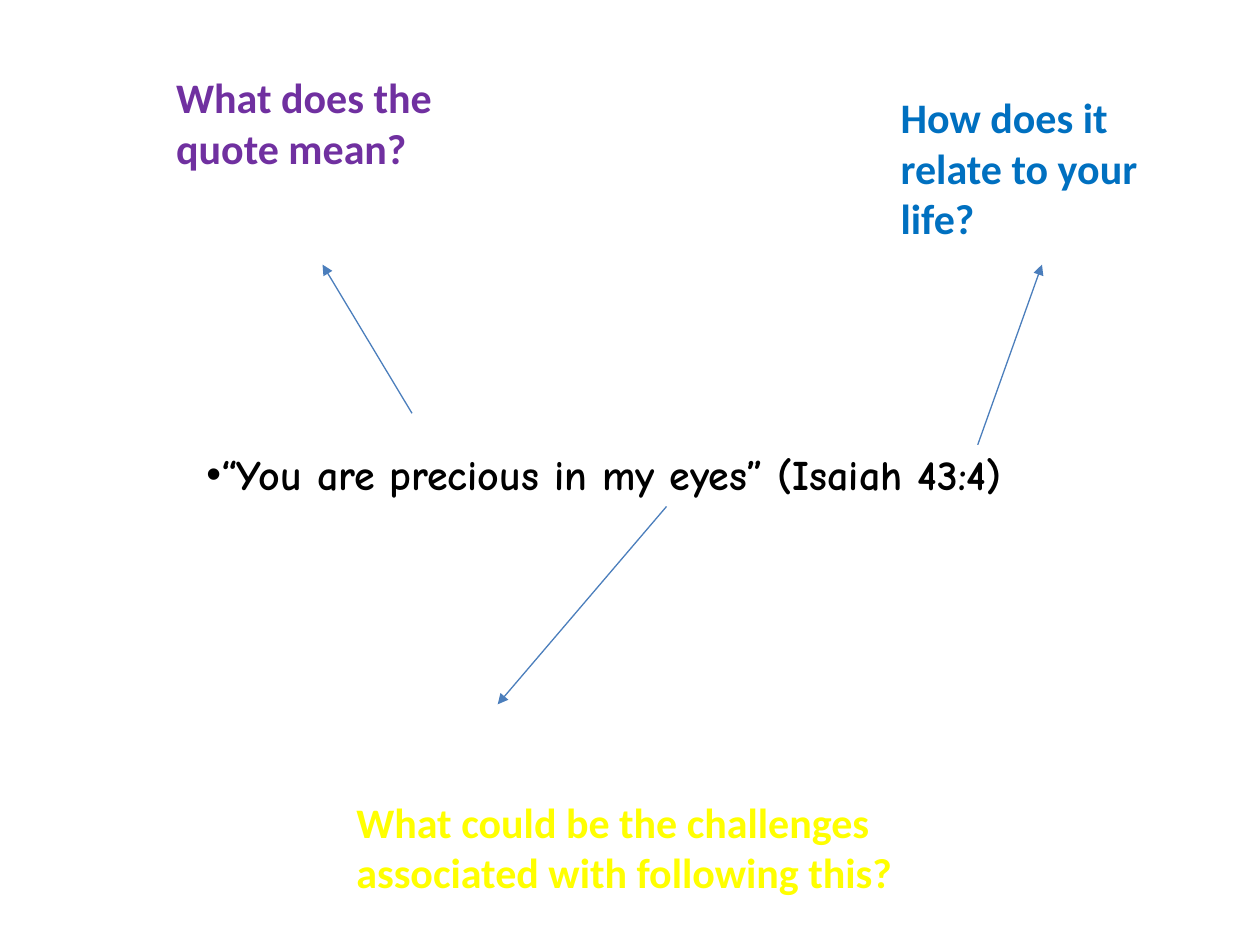
from lxml import etree
from pptx import Presentation
from pptx.dml.color import RGBColor
from pptx.enum.shapes import MSO_CONNECTOR
from pptx.enum.text import MSO_AUTO_SIZE
from pptx.oxml.ns import qn
from pptx.util import Inches, Pt

STRAIGHT = MSO_CONNECTOR.STRAIGHT
GROW = MSO_AUTO_SIZE.SHAPE_TO_FIT_TEXT

THEME = {
    "size": 24, "line": 0.75,
    "head": "Calibri", "quote": "Comic Neue",
    "black": "000000", "purple": "7030A0", "blue": "0070C0",
    "yellow": "FFFF00", "arrow": "4B7EBC",
}

# Content: text, box (left, top, width, height), font, colour, extras
QUOTE = ("“You are precious in my eyes” (Isaiah 43:4)",
         (1.54, 3.51, 7.51, 0.5), "quote", "black")
ASKS = [
    ("What does the quote mean?", (1.3, 0.52, 2.44, 0.91), "head", "purple"),
    ("How does it relate to your life?", (7.05, 0.68, 2.44, 1.31), "head", "blue"),
]
TEST = ("What could be the challenges associated with following this?",
        (2.73, 6.27, 5.34, 0.91), "head", "yellow")

# Arrows lead from the quote to each question
ARROWS = [
    ((3.27, 3.28), (2.56, 2.1)),
    ((7.76, 3.53), (8.27, 2.1)),
    ((5.29, 4.02), (3.95, 5.59)),
]


def color(name):
    return RGBColor.from_string(THEME[name])


def add_text(slide, text, box, font, tint, wrap=True):
    shape = slide.shapes.add_textbox(*map(Inches, box))
    frame = shape.text_frame
    frame.text = text
    frame.word_wrap = wrap
    frame.auto_size = GROW
    para = frame.paragraphs[0]
    run = para.runs[0]
    run.font.name = THEME[font]
    run.font.size = Pt(THEME["size"])
    run.font.bold = True
    run.font.color.rgb = color(tint)
    return para


def add_bullet(para):
    props = para._p.get_or_add_pPr()
    etree.SubElement(props, qn("a:buFont"), typeface="Arial")
    etree.SubElement(props, qn("a:buChar"), char="•")


def add_edge(para, tint):
    # The outline must come before the fill in the run properties
    line = etree.Element(qn("a:ln"), w=str(Pt(THEME["line"])))
    fill = etree.SubElement(line, qn("a:solidFill"))
    etree.SubElement(fill, qn("a:srgbClr"), val=THEME[tint])
    para.runs[0]._r.get_or_add_rPr().insert(0, line)


def add_arrow(slide, start, end):
    arrow = slide.shapes.add_connector(STRAIGHT, *map(Inches, start + end))
    arrow.line.color.rgb = color("arrow")
    arrow.line.width = Pt(THEME["line"])
    etree.SubElement(arrow.line._get_or_add_ln(), qn("a:tailEnd"), type="triangle")
    etree.SubElement(arrow._element.spPr, qn("a:effectLst"))


def main():
    deck = Presentation()
    deck.slide_width, deck.slide_height = Inches(10), Inches(7.5)
    slide = deck.slides.add_slide(deck.slide_layouts[6])

    # Quote in the middle
    add_bullet(add_text(slide, *QUOTE, wrap=False))

    # Questions around it
    for ask in ASKS:
        add_text(slide, *ask)
    add_edge(add_text(slide, *TEST), "black")

    # Arrows
    for start, end in ARROWS:
        add_arrow(slide, start, end)

    deck.save("out.pptx")


if __name__ == "__main__":
    main()
